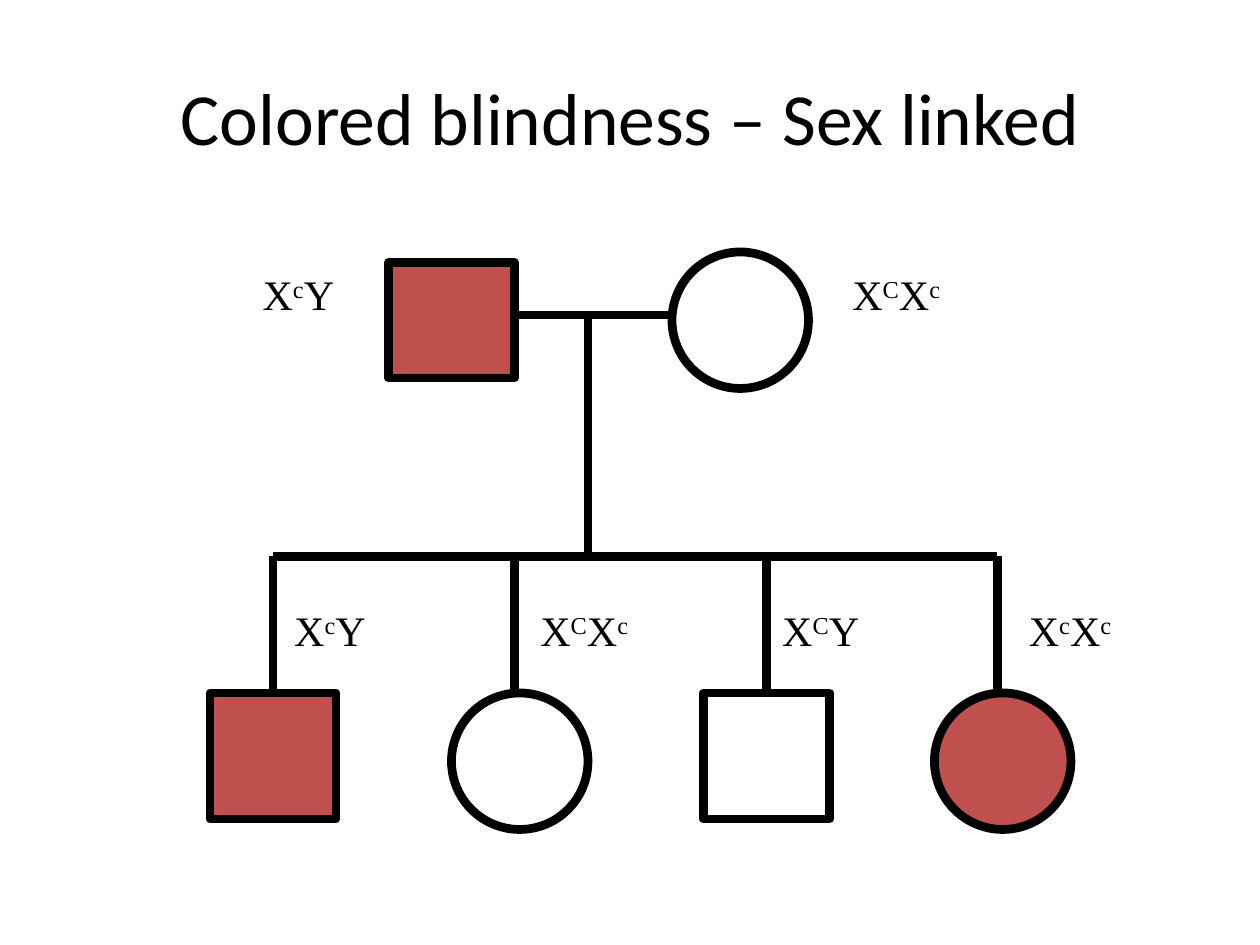
from dataclasses import dataclass

from lxml.etree import SubElement
from pptx import Presentation
from pptx.dml.color import RGBColor as Rgb
from pptx.enum.shapes import MSO_CONNECTOR as Connector, MSO_SHAPE as Preset
from pptx.enum.text import MSO_ANCHOR as Anchor, MSO_AUTO_SIZE as AutoSize, PP_ALIGN as Align
from pptx.oxml.ns import qn
from pptx.util import Pt


@dataclass(frozen=True)
class Theme:
    ink: Rgb = Rgb(0x00, 0x00, 0x00)
    affected: Rgb = Rgb(0xC0, 0x50, 0x4D)
    title_font: str = "Calibri"
    title_size: int = 42
    gene_font: str = "Times New Roman"
    gene_size: int = 24
    stroke: int = 5
    male_size: int = 72
    female_size: int = 78


class Pedigree:
    def __init__(self, slide, theme):
        self.slide = slide
        self.theme = theme

    def _text_frame(self, left, top, width, height, align):
        box = self.slide.shapes.add_textbox(Pt(left), Pt(top), Pt(width), Pt(height))
        frame = box.text_frame
        frame.word_wrap = True
        frame.paragraphs[0].alignment = align
        return frame

    def _run(self, paragraph, text, font, size):
        run = paragraph.add_run()
        run.text = text
        run.font.name = font
        run.font.size = Pt(size)
        run.font.color.rgb = self.theme.ink
        return run

    def title(self, text, left, top, width, height):
        frame = self._text_frame(left, top, width, height, Align.CENTER)
        frame.vertical_anchor = Anchor.MIDDLE
        self._run(frame.paragraphs[0], text, self.theme.title_font, self.theme.title_size)

    def genotype(self, alleles, left, top, width, align=Align.RIGHT):
        """Write the chromosomes, with the allele letters c and C raised."""
        frame = self._text_frame(left, top, width, 36, align)
        frame.auto_size = AutoSize.SHAPE_TO_FIT_TEXT
        paragraph = frame.paragraphs[0]
        # Spacing in percent of the line has no public setter
        spacing = SubElement(paragraph._p.get_or_add_pPr(), qn("a:spcBef"))
        SubElement(spacing, qn("a:spcPct")).set("val", "50000")
        for letter in alleles:
            run = self._run(paragraph, letter, self.theme.gene_font, self.theme.gene_size)
            if letter in "cC":
                run._r.get_or_add_rPr().set("baseline", "30000")

    def person(self, left, top, male, affected, height=None):
        size = self.theme.male_size if male else self.theme.female_size
        preset = Preset.RECTANGLE if male else Preset.OVAL
        symbol = self.slide.shapes.add_shape(
            preset, Pt(left), Pt(top), Pt(size), Pt(height or size))
        symbol.shadow.inherit = False
        if affected:
            symbol.fill.solid()
            symbol.fill.fore_color.rgb = self.theme.affected
        else:
            symbol.fill.background()
        self._stroke(symbol.line)

    def line(self, x1, y1, x2, y2):
        link = self.slide.shapes.add_connector(
            Connector.STRAIGHT, Pt(x1), Pt(y1), Pt(x2), Pt(y2))
        SubElement(link._element.spPr, qn("a:effectLst"))
        self._stroke(link.line)

    def _stroke(self, line):
        line.color.rgb = self.theme.ink
        line.width = Pt(self.theme.stroke)


def main():
    deck = Presentation()
    deck.slide_width, deck.slide_height = Pt(720), Pt(540)
    pedigree = Pedigree(deck.slides.add_slide(deck.slide_layouts[6]), Theme())

    pedigree.title("Colored blindness – Sex linked", 36, 21.6, 648, 90)

    # Parents
    pedigree.person(222, 150, male=True, affected=True, height=66)
    pedigree.person(384, 144, male=False, affected=False)
    pedigree.genotype("XcY", 96, 150, 102)
    pedigree.genotype("XCXc", 480, 150, 126, Align.LEFT)

    # Marriage line, descent line and sibling line
    marriage_y, sibling_y, child_y = 180, 318, 396
    children = [  # x of the drop line, genotype, male, affected
        (156, "XcY", True, True),
        (294, "XCXc", False, False),
        (438, "XCY", True, False),
        (570, "XcXc", False, True),
    ]
    pedigree.line(294, marriage_y, 384, marriage_y)
    pedigree.line(336, marriage_y, 336, sibling_y)
    pedigree.line(children[0][0], sibling_y, children[-1][0], sibling_y)

    # Children
    label_width = 84
    for drop_x, alleles, male, affected in children:
        pedigree.line(drop_x, sibling_y, drop_x, child_y)
        pedigree.person(drop_x - 36, child_y, male, affected)
        label_right = drop_x + (60 if male else 72)
        pedigree.genotype(alleles, label_right - label_width, 342, label_width)

    deck.save("out.pptx")


if __name__ == "__main__":
    main()
